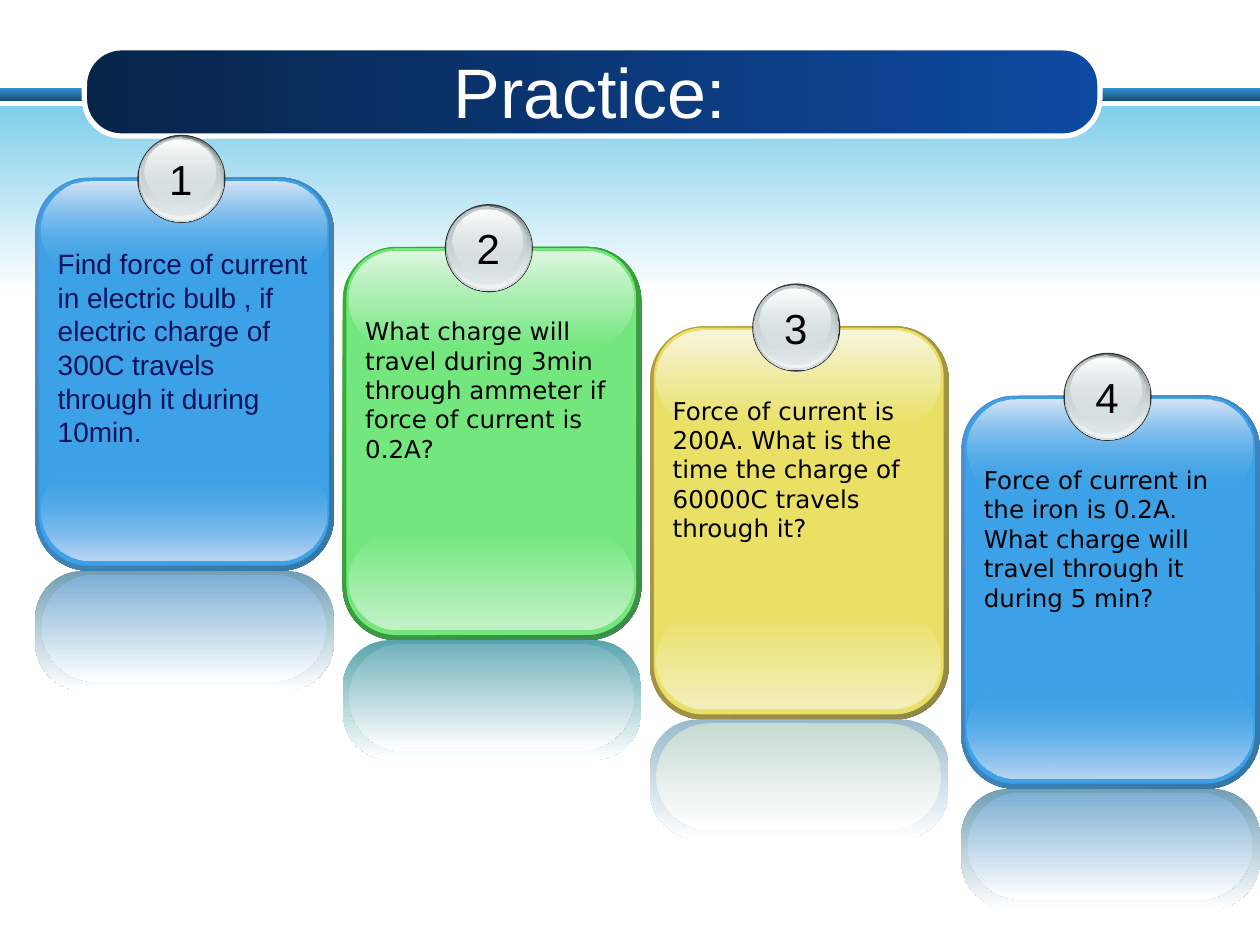
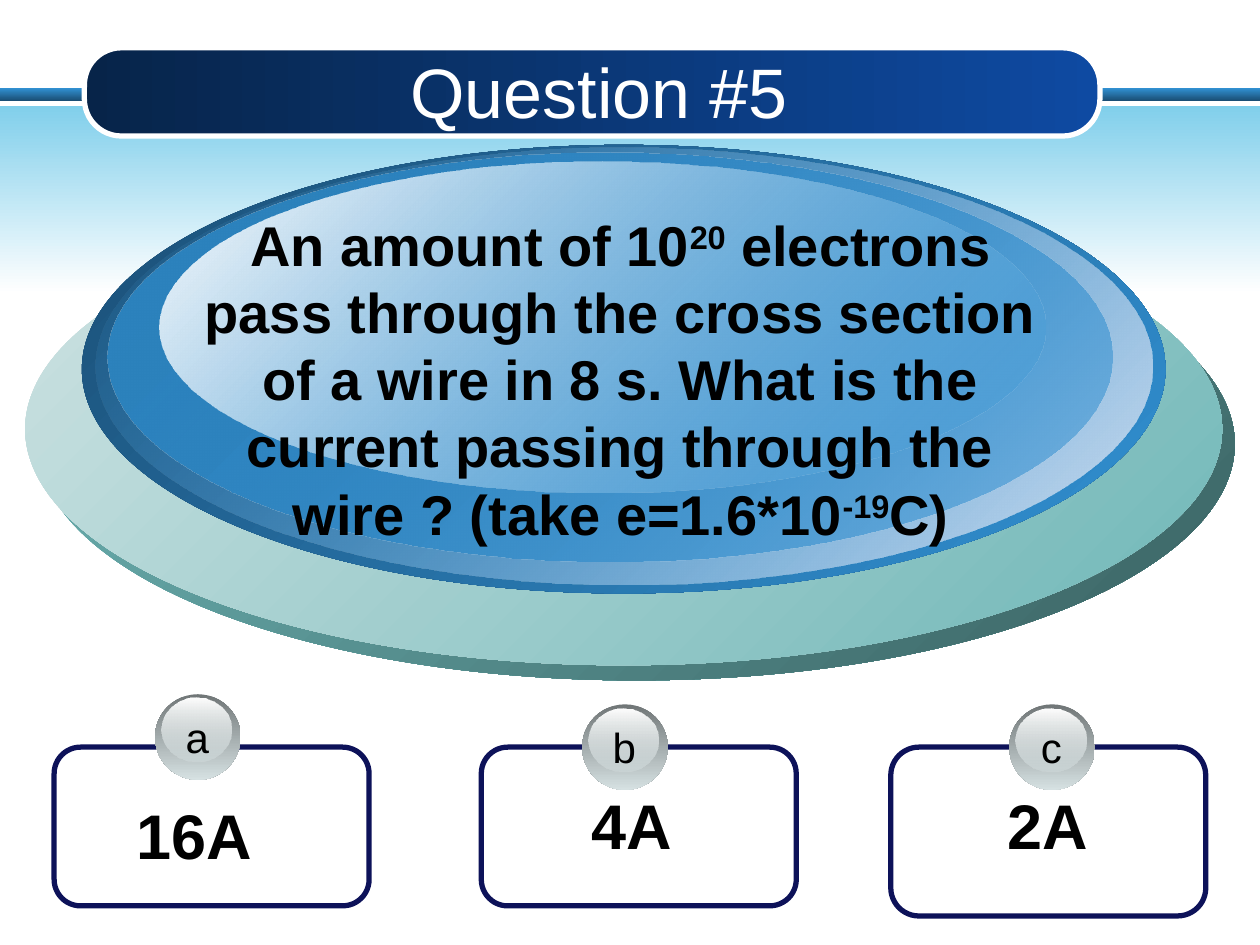
from dataclasses import dataclass
from typing import NamedTuple, Optional

import lxml.etree
import pptx
import pptx.dml.color
import pptx.enum.shapes
import pptx.enum.text
import pptx.oxml.ns
import pptx.shapes.autoshape
import pptx.slide
import pptx.util

EMU_PER_PX = 9144  # 100 px to the inch

KINDS = pptx.enum.shapes.MSO_SHAPE
ALIGN = pptx.enum.text.PP_ALIGN
AUTO_SIZE = pptx.enum.text.MSO_AUTO_SIZE
ANCHOR = pptx.enum.text.MSO_ANCHOR

NAVY, WHITE, BLACK = "0D1259", "FFFFFF", "000000"
SKY, SILVER = "3191D3", "D6E1E2"


class Box(NamedTuple):
    left: int
    top: int
    width: int
    height: int

    def shifted(self, dx: int, dy: int) -> "Box":
        return Box(self.left + dx, self.top + dy, self.width, self.height)


class Gradient(NamedTuple):
    start: str
    end: str
    angle: int = 90  # clockwise
    start_alpha: int = 100
    end_alpha: int = 100


@dataclass(frozen=True)
class Layer:
    """One filled outline of a stacked figure."""
    kind: int
    box: Box
    fill: "str | Gradient | None"
    rounding: Optional[float] = None
    line: Optional[str] = None


@dataclass(frozen=True)
class TextStyle:
    size: int
    color: str = BLACK
    bold: bool = False
    name: str = "Arial"
    align: int = ALIGN.CENTER


@dataclass(frozen=True)
class CardPalette:
    shell: Gradient
    body: str
    foot: str
    lid: str
    reflection: str
    mirror: str
    fade: int


@dataclass(frozen=True)
class Card:
    left: int
    top: int
    task: str
    palette: CardPalette
    style: TextStyle
    height: int = 128


@dataclass(frozen=True)
class Answer:
    letter: str
    value: str
    frame: Box
    value_box: Box
    badge: tuple[int, int]


# ---- Shared look ----
TITLE_BOX = Box(92, 41, 767, 62)
TITLE = TextStyle(40, WHITE)
BADGE_TEXT = TextStyle(24)
TITLE_FRAME = {"word_wrap": True, "auto_size": AUTO_SIZE.NONE,
               "vertical_anchor": ANCHOR.MIDDLE}
TEXT_FRAME = {"word_wrap": True, "auto_size": AUTO_SIZE.SHAPE_TO_FIT_TEXT}
BADGE_FRAME = {**TEXT_FRAME, "word_wrap": False}

BANDS = [
    Layer(KINDS.RECTANGLE, Box(0, 70, 1000, 10), Gradient(SKY, "1A4E75")),
    Layer(KINDS.RECTANGLE, Box(0, 84, 1000, 149), Gradient("81CFEB", WHITE)),
    Layer(KINDS.ROUNDED_RECTANGLE, Box(67, 38, 806, 70),
          Gradient("072449", "0E4AA2", 0), 0.42, WHITE),
]

BALL = Layer(KINDS.OVAL, Box(1, 1, 68, 68), Gradient("707677", SILVER))
GLOSS = Layer(KINDS.OVAL, Box(6, 4, 56, 50),
              Gradient(WHITE, SILVER, end_alpha=38))
PLAIN_BADGE = [BALL, GLOSS]
RIMMED_BADGE = [
    Layer(KINDS.OVAL, Box(0, 0, 70, 70), "333333"),
    BALL,
    Layer(KINDS.OVAL, Box(2, 1, 66, 66),
          Gradient(SILVER, "F2F5F5", start_alpha=0)),
    Layer(KINDS.OVAL, Box(2, 2, 63, 62),
          Gradient("C1CBCC", SILVER, end_alpha=48)),
    GLOSS,
]

# ---- Practice cards ----
BLUE = CardPalette(Gradient("4E91D4", "3477A4", 45), "3CA1E6", "BDD6F3",
                   "D7E5F7", "729EB4", "7DAFD4", 0)
GREEN = CardPalette(Gradient("34B034", "3F8B4A", 45), "73E77E", "C3F2C7",
                    "DDF7DF", "58A4AE", "72B2BB", 100)
YELLOW = CardPalette(Gradient("B59F43", "8F8849", 45), "E9E065", "F3EEBB",
                     "F8F5DB", "99BACC", "C8DAD4", 100)
FIRST_TASK = TextStyle(16, NAVY, align=ALIGN.LEFT)
TASK = TextStyle(14, name="DejaVu Sans", align=ALIGN.LEFT)

CARDS = [
    Card(28, 141, "Find force of current in electric bulb , if electric charge "
         "of 300C travels through it during 10min.", BLUE, FIRST_TASK, 172),
    Card(272, 196, "What charge will travel during 3min through ammeter if "
         "force of current is 0.2A?", GREEN, TASK),
    Card(516, 259, "Force of current is 200A. What is the time the charge of "
         "60000C travels through it?", YELLOW, TASK),
    Card(763, 314, "Force of current in the iron is 0.2A. What charge will "
         "travel through it during 5 min?", BLUE, TASK),
]

# ---- Question: superscripts stand between carets ----
QUESTION = ("An amount of 10^20^ electrons pass through the cross section of a "
            "wire in 8 s. What is the current passing through the wire ? "
            "(take e=1.6*10^-19^C)")
DISCS = [
    Layer(KINDS.OVAL, Box(30, 165, 950, 375), Gradient("6FB7B7", "3A6262", 45)),
    Layer(KINDS.OVAL, Box(20, 153, 950, 375), Gradient("CFE3E3", "6FB7B7", 45)),
    Layer(KINDS.OVAL, Box(65, 115, 860, 356), Gradient("1A4E75", SKY, 45)),
    Layer(KINDS.OVAL, Box(76, 117, 839, 347),
          Gradient(SKY, "D5E1F1", 45, start_alpha=0)),
    Layer(KINDS.OVAL, Box(85, 121, 798, 325),
          Gradient("2C83BF", SKY, 45, end_alpha=48)),
    Layer(KINDS.OVAL, Box(127, 128, 703, 263),
          Gradient(WHITE, SKY, 45, end_alpha=38)),
]
ANSWERS = [
    Answer("a", "16A", Box(43, 593, 250, 126), Box(43, 627, 223, 71), (122, 550)),
    Answer("b", "4A", Box(382, 593, 250, 126), Box(390, 619, 223, 71), (461, 558)),
    Answer("c", "2A", Box(707, 593, 250, 134), Box(720, 619, 223, 71), (800, 558)),
]


# ---- Drawing helpers ----
def px(length: int) -> pptx.util.Emu:
    return pptx.util.Emu(length * EMU_PER_PX)


def emu_box(box: Box) -> list[pptx.util.Emu]:
    return [px(length) for length in box]


def rgb(color: str) -> pptx.dml.color.RGBColor:
    return pptx.dml.color.RGBColor.from_string(color)


def fill_gradient(shape: pptx.shapes.autoshape.Shape, gradient: Gradient) -> None:
    shape.fill.gradient()
    shape.fill.gradient_angle = -gradient.angle % 360
    ends = [(gradient.start, gradient.start_alpha),
            (gradient.end, gradient.end_alpha)]
    for position, (stop, (color, _)) in enumerate(zip(shape.fill.gradient_stops, ends)):
        stop.color.rgb = rgb(color)
        stop.position = position
    # Transparency of the stops
    colors = shape.element.spPr.iter(pptx.oxml.ns.qn("a:srgbClr"))
    for node, (_, alpha) in zip(list(colors), ends):
        if alpha < 100:
            lxml.etree.SubElement(node, pptx.oxml.ns.qn("a:alpha"),
                                  val=str(alpha * 1000))


def draw_layer(slide: pptx.slide.Slide, layer: Layer, dx: int = 0,
               dy: int = 0) -> pptx.shapes.autoshape.Shape:
    shape = slide.shapes.add_shape(layer.kind, *emu_box(layer.box.shifted(dx, dy)))
    shape.shadow.inherit = False
    if layer.rounding is not None:
        shape.adjustments[0] = layer.rounding
    if isinstance(layer.fill, Gradient):
        fill_gradient(shape, layer.fill)
    elif layer.fill:
        shape.fill.solid()
        shape.fill.fore_color.rgb = rgb(layer.fill)
    else:
        shape.fill.background()
    if layer.line:
        shape.line.color.rgb = rgb(layer.line)
        shape.line.width = pptx.util.Pt(3)
    else:
        shape.line.fill.background()
    return shape


def write(shape: pptx.shapes.autoshape.Shape, text: str, style: TextStyle,
          frame_format: dict) -> None:
    frame = shape.text_frame
    for attribute, value in frame_format.items():
        setattr(frame, attribute, value)
    paragraph = frame.paragraphs[0]
    paragraph.alignment = style.align
    font_format = {"size": pptx.util.Pt(style.size), "bold": style.bold,
                   "name": style.name}
    for part in text.split("^"):
        run = paragraph.add_run()
        run.text = part
        for attribute, value in font_format.items():
            setattr(run.font, attribute, value)
        run.font.color.rgb = rgb(style.color)
    properties = list(shape.element.iter(pptx.oxml.ns.qn("a:rPr")))
    for superscript in properties[1::2]:
        superscript.set("baseline", "30000")


def draw_text(slide: pptx.slide.Slide, box: Box, text: str, style: TextStyle,
              frame_format: dict = TEXT_FRAME) -> None:
    label = slide.shapes.add_textbox(*emu_box(box))
    write(label, text, style, frame_format)


def draw_badge(slide: pptx.slide.Slide, layers: list[Layer], mark: str,
               left: int, top: int) -> None:
    for layer in layers:
        draw_layer(slide, layer, left, top)
    draw_text(slide, Box(left + 15, top + 10, 39, 50), mark, BADGE_TEXT, BADGE_FRAME)


def draw_card(slide: pptx.slide.Slide, number: int, card: Card) -> None:
    tones = card.palette
    parts = [
        (Box(0, 0, 237, 312), tones.shell, 0.18),
        (Box(3, 1, 230, 307), tones.body, 0.17),
        (Box(5, 226, 226, 78),
         Gradient(tones.body, tones.foot, start_alpha=tones.fade), 0.5),
        (Box(5, 3, 226, 77),
         Gradient(tones.lid, tones.body, end_alpha=tones.fade), 0.5),
        (Box(0, 312, 237, 95), Gradient(tones.reflection, WHITE), 0.4),
        (Box(5, 315, 226, 85), Gradient(tones.mirror, WHITE), 0.5),
    ]
    for box, fill, rounding in parts:
        draw_layer(slide, Layer(KINDS.ROUNDED_RECTANGLE, box, fill, rounding),
                   card.left, card.top)
    draw_badge(slide, RIMMED_BADGE, str(number), card.left + 81, card.top - 34)
    draw_text(slide, Box(card.left + 8, card.top + 50, 225, card.height),
              card.task, card.style)


def add_titled_slide(deck, layout: pptx.slide.SlideLayout,
                     heading: str) -> pptx.slide.Slide:
    slide = deck.slides.add_slide(layout)
    title = slide.shapes.title
    title.left, title.top, title.width, title.height = emu_box(TITLE_BOX)
    write(title, heading, TITLE, TITLE_FRAME)
    return slide


def main() -> None:
    deck = pptx.Presentation()
    deck.slide_width, deck.slide_height = px(1000), px(750)
    layout = deck.slide_layouts[5]  # Title Only

    # Practice slide; its bands move to the layout so both slides show them
    practice = add_titled_slide(deck, layout, "Practice: ")
    for position, band in enumerate(BANDS, start=2):
        layout.shapes.element.insert(position, draw_layer(practice, band).element)
    for number, card in enumerate(CARDS, start=1):
        draw_card(practice, number, card)

    # Question slide
    question = add_titled_slide(deck, layout, "Question #5")
    for disc in DISCS:
        draw_layer(question, disc)
    draw_text(question, Box(138, 162, 709, 279), QUESTION, TextStyle(32, bold=True))
    for answer in ANSWERS:
        draw_layer(question, Layer(KINDS.ROUNDED_RECTANGLE, answer.frame, None,
                                   line=NAVY))
        draw_text(question, answer.value_box, answer.value, TextStyle(36, bold=True))
        draw_badge(question, PLAIN_BADGE, answer.letter, *answer.badge)

    deck.save("out.pptx")


if __name__ == "__main__":
    main()
